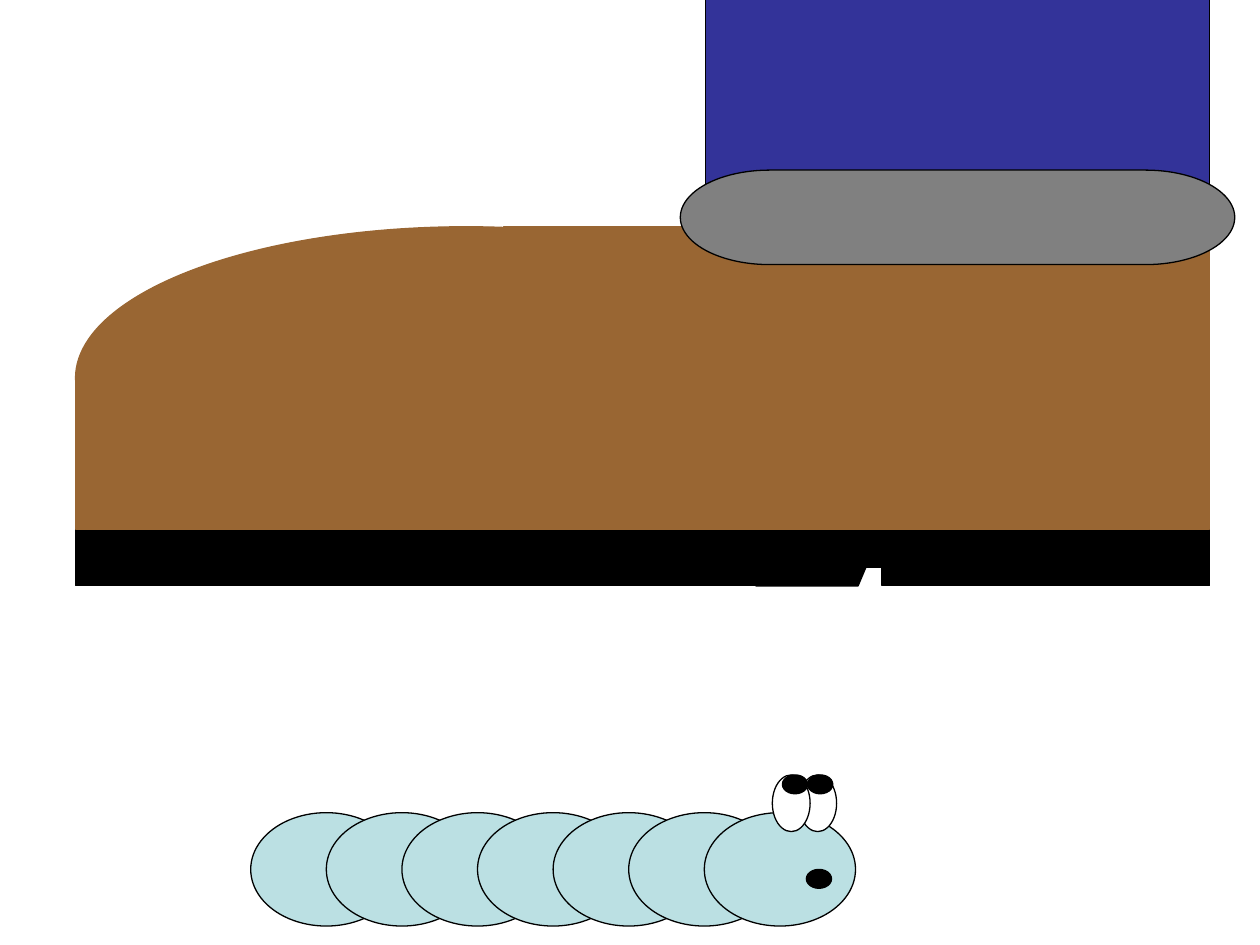
"""Build a slide of a boot coming down over a worm."""
from pptx import Presentation, util as u
from pptx.dml.color import RGBColor
from pptx.enum import shapes as s

KIND = s.MSO_SHAPE
INCH = 2.54
BLACK, WHITE, SKIN = "000000", "FFFFFF", "BBE0E3"
BROWN, BLUE, GREY = "996633", "333399", "808080"

COUNT, STEP = 7, 0.6
BODY = (1.99, 6.45, 1.2, 0.9)

FACE = [
    (KIND.OVAL, (6.34, 6.15, 0.3, 0.45), WHITE, BLACK),
    (KIND.OVAL, (6.13, 6.15, 0.3, 0.45), WHITE, BLACK),
    (KIND.FLOWCHART_CONNECTOR, (6.41, 6.15, 0.2, 0.15), BLACK, BLACK),
    (KIND.FLOWCHART_CONNECTOR, (6.21, 6.15, 0.2, 0.15), BLACK, BLACK),
    (KIND.OVAL, (6.4, 6.9, 0.2, 0.15), BLACK, BLACK),
]
BOOT = [
    (KIND.RECTANGLE, (5.6, -0.3, 4, 1.95), BLUE, BLACK),
    (KIND.RECTANGLE, (0.6, 4.2, 6, 0.45), BLACK, BLACK),
    (KIND.RECTANGLE, (7, 4.2, 2.6, 0.45), BLACK, BLACK),
    (KIND.PARALLELOGRAM, (6, 4.2, 1, 0.45), BLACK, BLACK),
    (KIND.RECTANGLE, (6.6, 4.2, 0.4, 0.3), BLACK, BLACK),
    (KIND.OVAL, (0.6, 1.8, 6.2, 2.4), BROWN, BROWN),
    (KIND.RECTANGLE, (0.6, 3, 9, 1.2), BROWN, BROWN),
    (KIND.RECTANGLE, (4, 1.8, 5.6, 1.35), BROWN, BROWN),
    (KIND.FLOWCHART_TERMINATOR, (5.4, 1.35, 4.4, 0.75), GREY, BLACK),
]


def size(inch):
    return u.Cm(inch * INCH)


def paint(form, tone):
    form.solid()
    form.fore_color.rgb = RGBColor.from_string(tone)


def draw(tree, kind, box, fill, edge):
    part = tree.add_shape(kind, *map(size, box))
    part.shadow.inherit = False
    paint(part.fill, fill)
    paint(part.line.fill, edge)
    part.line.width = u.Pt(0.75)
    if kind == KIND.PARALLELOGRAM:
        part.adjustments[0] = 0.42


def main():
    deck = Presentation()
    deck.slide_width, deck.slide_height = size(10), size(7.5)
    slide = deck.slides.add_slide(deck.slide_layouts[6])
    left, top, wide, high = BODY
    worm = [(KIND.OVAL, (left + i * STEP, top, wide, high), SKIN, BLACK)
            for i in range(COUNT)]
    for part in worm + FACE:
        draw(slide.shapes, *part)
    boot = slide.shapes.add_group_shape()
    for part in BOOT:
        draw(boot.shapes, *part)
    deck.save("out.pptx")


if __name__ == "__main__":
    main()
